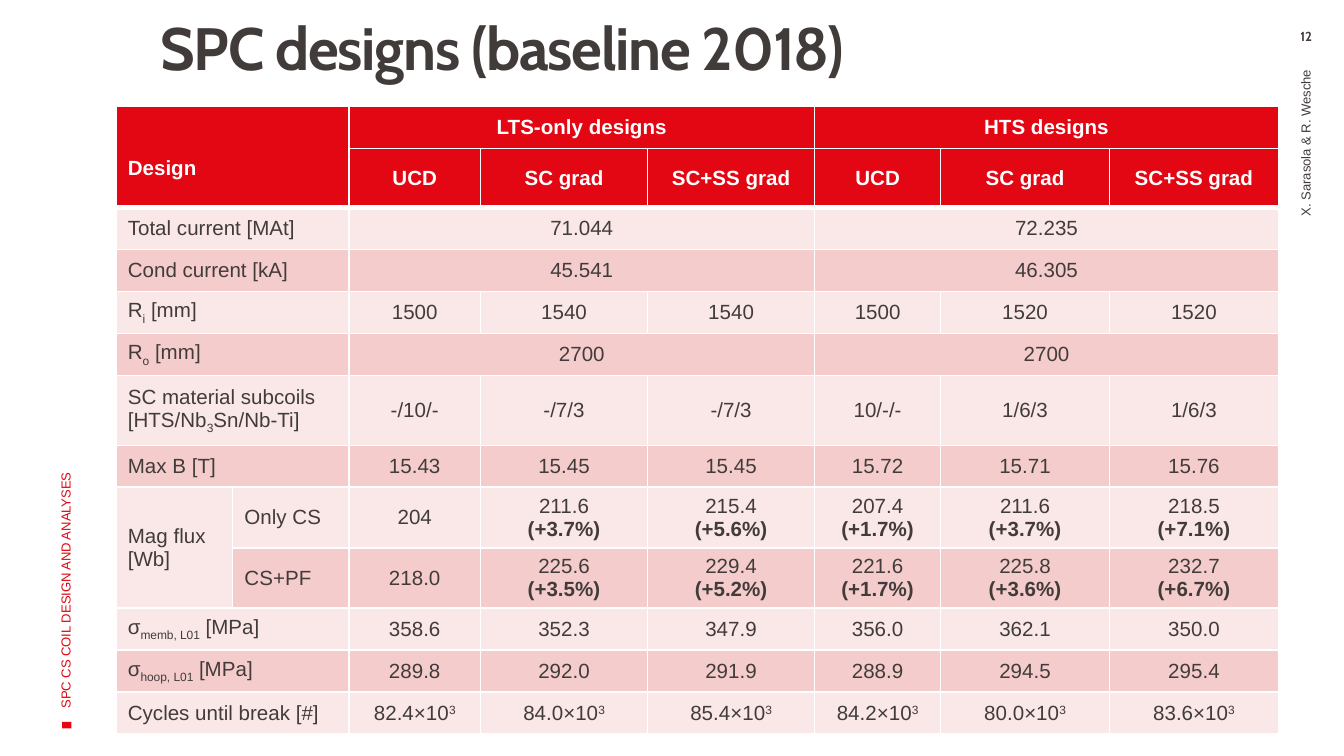
from lxml.etree import SubElement as Sub
from pptx import Presentation
from pptx.dml.color import RGBColor as RGB
from pptx.enum.shapes import MSO_SHAPE as Shape
from pptx.enum.text import MSO_ANCHOR as Anchor, MSO_AUTO_SIZE as Fit, PP_ALIGN as Align
from pptx.oxml.ns import qn
from pptx.util import Pt

PX = 6350
RED = RGB(0xE3, 0x06, 0x13)
DARK = RGB(0x41, 0x3C, 0x3A)
WHITE = RGB(0xFF, 0xFF, 0xFF)
PALE = RGB(0xFA, 0xE7, 0xE7)
PINK = RGB(0xF4, 0xCC, 0xCC)
SHIFT = {"_": "-25000", "^": "30000"}

COLS = [125, 125, 141, 179, 179, 135, 181, 181]
ROWS = [45, 63, 45, 45, 45, 45, 75, 45, 63, 63, 45, 45, 45]
GRADES = ["UCD", "SC grad", "SC+SS grad"]
HEAD = [
    (["Design"], ["LTS-only designs", "HTS designs"]),
    ([], GRADES * 2),
]
BODY = [
    (["Total current [MAt]"], ["71.044", "72.235"]),
    (["Cond current [kA]"], ["45.541", "46.305"]),
    (["R|_i| [mm]"], ["1500", "1540", "1540", "1500", "1520", "1520"]),
    (["R|_o| [mm]"], ["2700", "2700"]),
    (["SC material subcoils\n[HTS/Nb|_3|Sn/Nb-Ti]"],
     ["-/10/-", "-/7/3", "-/7/3", "10/-/-", "1/6/3", "1/6/3"]),
    (["Max B [T]"], ["15.43", "15.45", "15.45", "15.72", "15.71", "15.76"]),
    (["Mag flux [Wb]", "Only CS"],
     ["204", "211.6\n*(+3.7%)", "215.4\n*(+5.6%)", "207.4\n*(+1.7%)",
      "211.6\n*(+3.7%)", "218.5\n*(+7.1%)"]),
    (["", "CS+PF"],
     ["218.0", "225.6\n*(+3.5%)", "229.4\n*(+5.2%)", "221.6\n*(+1.7%)",
      "225.8\n*(+3.6%)", "232.7\n*(+6.7%)"]),
    (["σ|_memb, L01| [MPa]"], ["358.6", "352.3", "347.9", "356.0", "362.1", "350.0"]),
    (["σ|_hoop, L01| [MPa]"], ["289.8", "292.0", "291.9", "288.9", "294.5", "295.4"]),
    (["Cycles until break [#]"],
     [f"{n}×10|^3" for n in ("82.4", "84.0", "85.4", "84.2", "80.0", "83.6")]),
]


def write(frame, text, size=11, font="Arial", color=DARK, bold=False,
          align=Align.LEFT, lead=None, track=None):
    for i, line in enumerate(text.split("\n")):
        para = frame.add_paragraph() if i else frame.paragraphs[0]
        para.alignment = align
        if lead:
            para.line_spacing = lead
        for part in line.split("|"):
            run = para.add_run()
            run.text = part.lstrip("_^*")
            face = run.font
            face.size, face.name = Pt(size), font
            face.bold = bold or part.startswith("*")
            face.color.rgb = color
            props = run._r.get_or_add_rPr()
            if part[0] in SHIFT:
                props.set("baseline", SHIFT[part[0]])
            if track:
                props.set("spc", str(track))


def place(shape, box):
    shape.left, shape.top, shape.width, shape.height = (n * PX for n in box)


def inset(item, left, top, right, bottom):
    item.margin_left, item.margin_top = left * PX, top * PX
    item.margin_right, item.margin_bottom = right * PX, bottom * PX


def add_title(slide, box):
    title = slide.shapes.title
    place(title, box)
    frame = title.text_frame
    frame.word_wrap, frame.auto_size = True, Fit.NONE
    frame.vertical_anchor = Anchor.TOP
    inset(frame, 29, 0, 12, 7)
    write(frame, "SPC designs (baseline 2018)", size=32, font="Cabin",
          bold=True, lead=0.9, track=-70)


def add_note(slide, box, text, turn=0, anchor=Anchor.MIDDLE, pad=7, **style):
    note = slide.shapes.add_textbox(0, 0, 0, 0)
    place(note, box)
    note.rotation = turn
    frame = note.text_frame
    frame.word_wrap = True
    frame.vertical_anchor = anchor
    inset(frame, 14, pad, 14, pad)
    write(frame, text, size=7, **style)


def add_mark(slide, box):
    mark = slide.shapes.add_shape(Shape.RECTANGLE, 0, 0, 0, 0)
    place(mark, box)
    mark.rotation = 270
    mark.shadow.inherit = False
    mark.fill.solid()
    mark.fill.fore_color.rgb = RED
    mark.line.fill.background()


def edge(cell, row, col):
    props = cell._tc.get_or_add_tcPr()
    thick = {"T": row == 2, "B": row == 1 or (row == 0 and col < 2)}
    for side in "LRTB":
        width = Pt(3 if thick.get(side) else 1)
        line = Sub(props, qn(f"a:ln{side}"), w=str(width))
        Sub(Sub(line, qn("a:solidFill")), qn("a:srgbClr"), val=str(WHITE))


def add_grid(slide, left, top):
    box = (left, top, sum(COLS), sum(ROWS))
    grid = slide.shapes.add_table(len(ROWS), len(COLS), *(n * PX for n in box)).table
    grid.first_row = grid.horz_banding = False
    for col, width in zip(grid.columns, COLS):
        col.width = width * PX
    for row, height in zip(grid.rows, ROWS):
        row.height = height * PX
    for r, (labels, values) in enumerate(HEAD + BODY):
        head = r < len(HEAD)
        fill = RED if head else (PALE, PINK)[r % 2]
        style = dict(color=WHITE if head else DARK, bold=head)
        for c in range(len(COLS)):
            cell = grid.cell(r, c)
            edge(cell, r, c)
            cell.fill.solid()
            cell.fill.fore_color.rgb = fill
            cell.vertical_anchor = Anchor.MIDDLE
            inset(cell, 13, 6, 13, 6)
        for c, text in enumerate(labels):
            if text:
                write(grid.cell(r, c).text_frame, text, **style)
        if len(labels) == 1:
            grid.cell(r, 0).merge(grid.cell(1 if head else r, 1))
        span = 6 // len(values)
        for i, text in enumerate(values):
            c = 2 + i * span
            cell = grid.cell(r, c)
            write(cell.text_frame, text, align=Align.CENTER, **style)
            if span > 1:
                cell.merge(grid.cell(r, c + span - 1))
    flux = len(HEAD) + 6
    grid.cell(flux, 0).merge(grid.cell(flux + 1, 0))
    grid.cell(0, 0).margin_top = 31 * PX


def main():
    deck = Presentation()
    deck.slide_width, deck.slide_height = 1440 * PX, 810 * PX
    slide = deck.slides.add_slide(deck.slide_layouts[5])
    add_mark(slide, (68, 772, 7, 10))
    add_title(slide, (143, 20, 1228, 78))
    add_note(slide, (-193, 438, 526, 144), "SPC CS COIL DESIGN AND ANALYSES",
             turn=270, color=RED)
    add_note(slide, (1120, 295, 557, 81), "X. Sarasola & R. Wesche ",
             turn=270, align=Align.RIGHT)
    add_note(slide, (1359, 30, 81, 26), "12", anchor=Anchor.TOP, pad=0,
             font="Cabin", bold=True, align=Align.CENTER)
    add_grid(slide, 124, 114)
    deck.save("out.pptx")


if __name__ == "__main__":
    main()
